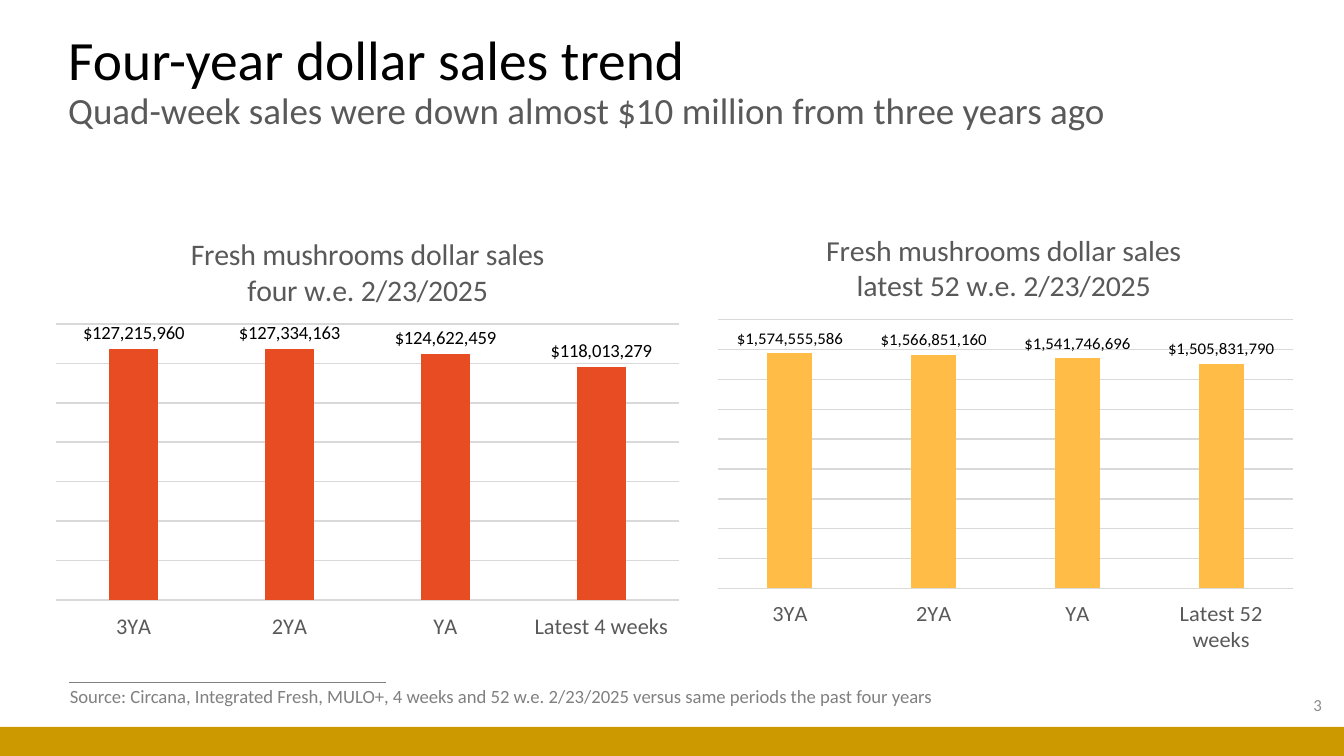
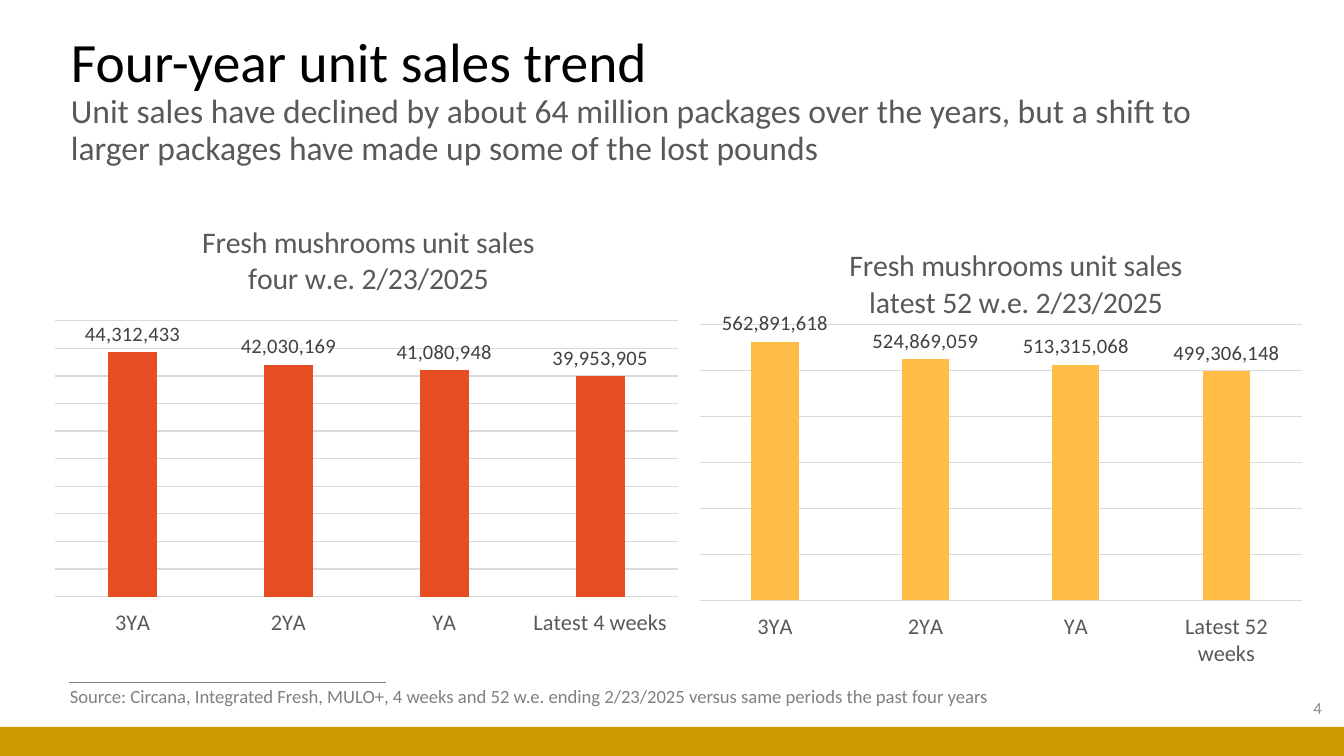
from dataclasses import dataclass

from lxml import etree
from pptx import Presentation
from pptx.chart.data import CategoryChartData
from pptx.dml.color import RGBColor
from pptx.enum.chart import XL_CHART_TYPE, XL_LABEL_POSITION, XL_TICK_LABEL_POSITION, XL_TICK_MARK
from pptx.enum.shapes import MSO_CONNECTOR, MSO_SHAPE
from pptx.enum.text import MSO_ANCHOR, MSO_AUTO_SIZE, PP_ALIGN
from pptx.oxml.ns import qn
from pptx.util import Cm, Pt

COLUMNS = XL_CHART_TYPE.COLUMN_CLUSTERED
OUTSIDE_END = XL_LABEL_POSITION.OUTSIDE_END
LABELS_LOW = XL_TICK_LABEL_POSITION.LOW
NO_TICK = XL_TICK_MARK.NONE
STRAIGHT = MSO_CONNECTOR.STRAIGHT
RECTANGLE = MSO_SHAPE.RECTANGLE
MIDDLE = MSO_ANCHOR.MIDDLE
FIT_SHAPE = MSO_AUTO_SIZE.SHAPE_TO_FIT_TEXT
RIGHT = PP_ALIGN.RIGHT

BLACK = RGBColor(0x00, 0x00, 0x00)
CHARCOAL = RGBColor(0x40, 0x40, 0x40)
SLATE = RGBColor(0x59, 0x59, 0x59)
GRAY = RGBColor(0x80, 0x80, 0x80)
NUMBER_GRAY = RGBColor(0x8C, 0x8C, 0x8C)
GRID_GRAY = RGBColor(0xD9, 0xD9, 0xD9)
GOLD = RGBColor(0xCC, 0x99, 0x00)
RED = RGBColor(0xE8, 0x4C, 0x22)
AMBER = RGBColor(0xFF, 0xBD, 0x47)

FONT = "Calibri"
SLIDE_WIDTH, SLIDE_HEIGHT = 25.4, 14.29
DOLLARS, UNITS = "\\$#,##0", "#,##0"


@dataclass
class SalesChart:
    """Content and inner layout of one column chart."""

    box: tuple
    heading: tuple
    heading_at: tuple
    plot: tuple
    latest: str
    sales: tuple
    top: int
    step: int
    color: RGBColor
    number_format: str
    label_size: int
    label_color: RGBColor


@dataclass
class TrendSlide:
    """Content of one trend slide."""

    title_box: tuple
    title: str
    subtitle: str
    subtitle_size: float
    source: str
    source_width: float
    number: str
    number_top: float
    charts: tuple


def style(font, size, color):
    """Apply the deck font with a size and colour."""
    font.name = FONT
    font.size = Pt(size)
    font.color.rgb = color


def add_text_box(slide, box):
    """Add an empty text box and return its frame."""
    return slide.shapes.add_textbox(*map(Cm, box)).text_frame


def add_title(slide, box, title, subtitle, subtitle_size):
    """Write the title and the subtitle beneath it."""
    frame = add_text_box(slide, box)
    frame.word_wrap = True
    frame.vertical_anchor = MIDDLE
    heading = frame.paragraphs[0]
    heading.line_spacing = 0.9
    headline = heading.add_run()
    headline.text = title
    style(headline.font, 29.7, BLACK)
    heading.add_line_break()
    message = heading.add_run()
    message.text = subtitle
    style(message.font, subtitle_size, SLATE)


def add_rule_and_band(slide):
    """Draw the rule above the source and the band along the bottom."""
    rule = slide.shapes.add_connector(STRAIGHT, Cm(1.3), Cm(12.9), Cm(7.29), Cm(12.9))
    rule.line.color.rgb = GRAY
    rule.line.width = Pt(0.5)
    etree.SubElement(rule._element.spPr, qn("a:effectLst"))
    height = 0.55
    band = slide.shapes.add_shape(
        RECTANGLE, 0, Cm(SLIDE_HEIGHT - height), Cm(SLIDE_WIDTH), Cm(height)
    )
    band.shadow.inherit = False
    band.fill.solid()
    band.fill.fore_color.rgb = GOLD
    band.line.fill.background()


def add_footer(slide, source, source_width, number, number_top):
    """Write the source line and the slide number."""
    number_frame = add_text_box(slide, (19.51, number_top, 5.72, 0.76))
    number_frame.vertical_anchor = MIDDLE
    number_frame.word_wrap = True
    page = number_frame.paragraphs[0]
    page.text = number
    page.alignment = RIGHT
    style(page.font, 9, NUMBER_GRAY)
    source_frame = add_text_box(slide, (1.07, 12.83, source_width, 0.69))
    source_frame.word_wrap = False
    source_frame.auto_size = FIT_SHAPE
    citation = source_frame.paragraphs[0]
    citation.text = source
    style(citation.font, 10, GRAY)


def set_layout(parent, index, values, inner=False):
    """Place a chart part by fractions of the chart area."""
    layout = parent.find(qn("c:layout"))
    if layout is not None:
        parent.remove(layout)
    layout = etree.Element(qn("c:layout"))
    parent.insert(index, layout)
    manual = etree.SubElement(layout, qn("c:manualLayout"))
    settings = [("layoutTarget", "inner")] if inner else []
    settings += [("xMode", "edge"), ("yMode", "edge")]
    settings += zip("xywh", values)
    for tag, value in settings:
        etree.SubElement(manual, qn("c:" + tag)).set("val", str(value))


def add_chart_heading(chart, lines, position):
    """Write the two-line heading of a chart."""
    frame = chart.chart_title.text_frame
    frame.text = "\n".join(lines)
    for line in frame.paragraphs:
        style(line.font, 16, SLATE)
        line.font.bold = False
    chart.chart_title.include_in_layout = False
    set_layout(chart.chart_title._element, 1, position)


def style_axes(chart, top, step, number_format):
    """Show the years and gridlines and hide the value scale."""
    years = chart.category_axis
    years.major_tick_mark = years.minor_tick_mark = NO_TICK
    years.tick_label_position = LABELS_LOW
    style(years.tick_labels.font, 12, SLATE)
    scale = chart.value_axis
    scale.visible = False
    scale.minimum_scale = 0
    scale.maximum_scale = top
    scale.major_unit = step
    scale.has_major_gridlines = True
    scale.tick_labels.number_format = number_format
    scale.tick_labels.number_format_is_linked = False
    for line in (years.format.line, scale.major_gridlines.format.line):
        line.color.rgb = GRID_GRAY
        line.width = Pt(0.75)


def add_sales_chart(slide, sales_chart):
    """Add a column chart of sales over four years."""
    data = CategoryChartData(number_format=sales_chart.number_format)
    data.categories = ("3YA", "2YA", "YA", sales_chart.latest)
    data.add_series("Series 1", sales_chart.sales)
    chart = slide.shapes.add_chart(COLUMNS, *map(Cm, sales_chart.box), data).chart
    chart.has_legend = False
    style(chart.font, 10, BLACK)
    add_chart_heading(chart, sales_chart.heading, sales_chart.heading_at)
    style_axes(chart, sales_chart.top, sales_chart.step, sales_chart.number_format)
    set_layout(chart._chartSpace.chart.plotArea, 0, sales_chart.plot, inner=True)

    plot = chart.plots[0]
    plot.gap_width = 219
    plot.overlap = -27
    plot.vary_by_categories = False
    columns = plot.series[0]
    columns.invert_if_negative = False
    columns.format.fill.solid()
    columns.format.fill.fore_color.rgb = sales_chart.color
    labels = columns.data_labels
    labels.show_value = True
    labels.position = OUTSIDE_END
    labels.number_format = sales_chart.number_format
    labels.number_format_is_linked = False
    style(labels.font, sales_chart.label_size, sales_chart.label_color)


def add_trend_slide(deck, trend):
    """Build one trend slide with its two charts."""
    slide = deck.slides.add_slide(deck.slide_layouts[6])
    add_rule_and_band(slide)
    add_title(slide, trend.title_box, trend.title, trend.subtitle, trend.subtitle_size)
    add_footer(slide, trend.source, trend.source_width, trend.number, trend.number_top)
    for sales_chart in trend.charts:
        add_sales_chart(slide, sales_chart)


DOLLAR_TREND = TrendSlide(
    title_box=(1.04, 0.56, 21.84, 2.01),
    title="Four-year dollar sales trend",
    subtitle="Quad-week sales were down almost $10 million from three years ago",
    subtitle_size=19.8,
    source="Source: Circana, Integrated Fresh, MULO+, 4 weeks and 52 w.e. 2/23/2025 "
    "versus same periods the past four years",
    source_width=17.32,
    number="3",
    number_top=12.95,
    charts=(
        SalesChart(
            (1.04, 3.94, 11.81, 8.41),
            ("Fresh mushrooms dollar sales", "four w.e. 2/23/2025"),
            (0.21, 0.05), (0, 0.26, 1, 0.62), "Latest 4 weeks",
            (127215960, 127334163, 124622459, 118013279),
            140_000_000, 20_000_000, RED, DOLLARS, 10, BLACK,
        ),
        SalesChart(
            (13.11, 4.14, 11.56, 8.2),
            ("Fresh mushrooms dollar sales", "latest 52 w.e. 2/23/2025"),
            (0.21, 0.02), (0.04, 0.24, 0.94, 0.64), "Latest 52 weeks",
            (1574555586, 1566851160, 1541746696, 1505831790),
            1_800_000_000, 200_000_000, AMBER, DOLLARS, 9, BLACK,
        ),
    ),
)

UNIT_TREND = TrendSlide(
    title_box=(1.09, 0.91, 23.01, 2.01),
    title="Four-year unit sales trend",
    subtitle="Unit sales have declined by about 64 million packages over the years, "
    "but a shift to larger packages have made up some of the lost pounds",
    subtitle_size=18,
    source="Source: Circana, Integrated Fresh, MULO+, 4 weeks and 52 w.e. ending 2/23/2025 "
    "versus same periods the past four years",
    source_width=18.39,
    number="4",
    number_top=13,
    charts=(
        SalesChart(
            (1.02, 3.71, 11.81, 8.41),
            ("Fresh mushrooms unit sales", "four w.e. 2/23/2025"),
            (0.23, 0.05), (0, 0.28, 1, 0.62), "Latest 4 weeks",
            (44312433, 42030169, 41080948, 39953905),
            50_000_000, 5_000_000, RED, UNITS, 11, CHARCOAL,
        ),
        SalesChart(
            (13.21, 4.14, 11.99, 8.69),
            ("Fresh mushrooms unit sales", "latest 52 w.e. 2/23/2025"),
            (0.23, 0.05), (0, 0.23, 0.95, 0.6), "Latest 52 weeks",
            (562891618, 524869059, 513315068, 499306148),
            600_000_000, 100_000_000, AMBER, UNITS, 11, CHARCOAL,
        ),
    ),
)


def main():
    """Build and save the deck."""
    deck = Presentation()
    deck.slide_width = Cm(SLIDE_WIDTH)
    deck.slide_height = Cm(SLIDE_HEIGHT)
    for trend in (DOLLAR_TREND, UNIT_TREND):
        add_trend_slide(deck, trend)
    deck.save("out.pptx")


if __name__ == "__main__":
    main()
